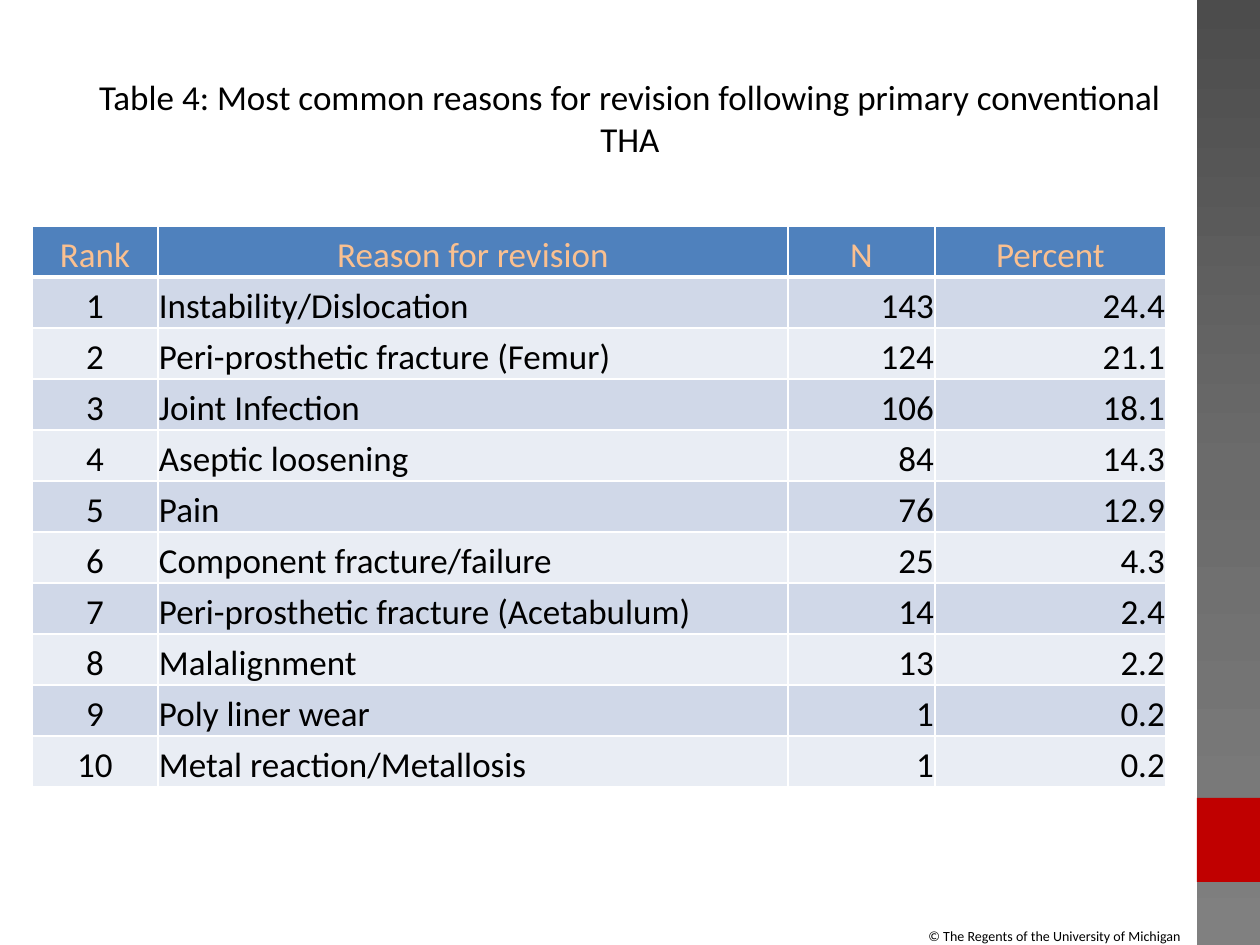
from copy import deepcopy

from lxml import etree
from pptx import Presentation
from pptx.dml.color import RGBColor
from pptx.enum.shapes import MSO_SHAPE
from pptx.enum.text import MSO_ANCHOR, PP_ALIGN
from pptx.oxml.ns import qn
from pptx.util import Pt

LEFT, CENTER, RIGHT = PP_ALIGN.LEFT, PP_ALIGN.CENTER, PP_ALIGN.RIGHT
TOP, MIDDLE, BOTTOM = MSO_ANCHOR.TOP, MSO_ANCHOR.MIDDLE, MSO_ANCHOR.BOTTOM
RECTANGLE = MSO_SHAPE.RECTANGLE
PX = 914400 // 126  # EMU per px

# Content
TITLE = "Table 4: Most common reasons for revision following primary conventional THA"
COPYRIGHT = "© The Regents of the University of Michigan"
HEADER = ("Rank", "Reason for revision", "N", "Percent")
REASONS = [
    ("Instability/Dislocation", "143", "24.4"),
    ("Peri-prosthetic fracture (Femur)", "124", "21.1"),
    ("Joint Infection", "106", "18.1"),
    ("Aseptic loosening", "84", "14.3"),
    ("Pain", "76", "12.9"),
    ("Component fracture/failure", "25", "4.3"),
    ("Peri-prosthetic fracture (Acetabulum)", "14", "2.4"),
    ("Malalignment", "13", "2.2"),
    ("Poly liner wear", "1", "0.2"),
    ("Metal reaction/Metallosis", "1", "0.2"),
]
ALIGNMENTS = (CENTER, LEFT, RIGHT, RIGHT)
COLUMN_WIDTHS = (126, 630, 147, 231)
ROW_HEIGHT = 51

COLORS = {
    "text": "000000", "header_text": "FAC090", "header": "4F81BD",
    "odd": "D0D8E8", "even": "E9EDF4", "border": "FFFFFF", "accent": "C00000",
    "bar_top": "4C4C4C", "bar_middle": "6B6B6B", "bar_bottom": "808080",
}


def rgb(name):
    return RGBColor.from_string(COLORS[name])


def px(*lengths):
    return [length * PX for length in lengths]


def write(frame, text, size=20, color="text", align=LEFT, anchor=TOP, wrap=True):
    frame.word_wrap = wrap
    frame.vertical_anchor = anchor
    paragraph = frame.paragraphs[0]
    paragraph.alignment = align
    run = paragraph.add_run()
    run.text = text
    run.font.name = "Calibri"
    run.font.size = Pt(size)
    run.font.bold = False
    run.font.color.rgb = rgb(color)


def add_bar(slide, *box):
    shape = slide.shapes.add_shape(RECTANGLE, *px(*box))
    shape.shadow.inherit = False
    shape.line.fill.background()
    return shape


def set_borders(cell, top, bottom):
    properties = cell._tc.get_or_add_tcPr()
    for side, width in (("L", 1), ("R", 1), ("T", top), ("B", bottom)):
        line = etree.SubElement(properties, qn(f"a:ln{side}"), w=str(Pt(width)))
        fill = etree.SubElement(line, qn("a:solidFill"))
        etree.SubElement(fill, qn("a:srgbClr"), val=COLORS["border"])


def add_side_bar(slide):
    bar = add_bar(slide, 1197, 0, 63, 945)
    bar.fill.gradient()
    bar.fill.gradient_angle = 270
    first = bar._element.spPr.find(".//" + qn("a:gs"))
    first.addnext(deepcopy(first))
    stops = zip(bar.fill.gradient_stops, ("bar_top", "bar_middle", "bar_bottom"), (0, 0.5, 1))
    for stop, color, position in stops:
        stop.color.rgb = rgb(color)
        stop.position = position

    accent = add_bar(slide, 1197, 798, 63, 84)
    accent.fill.solid()
    accent.fill.fore_color.rgb = rgb("accent")


def add_reason_table(slide):
    rows = [HEADER] + [(str(rank), *reason) for rank, reason in enumerate(REASONS, 1)]
    box = px(32, 226, sum(COLUMN_WIDTHS), ROW_HEIGHT * len(rows))
    table = slide.shapes.add_table(len(rows), len(HEADER), *box).table
    for column, width in zip(table.columns, COLUMN_WIDTHS):
        column.width = width * PX
    for r, values in enumerate(rows):
        table.rows[r].height = ROW_HEIGHT * PX
        is_header = r == 0
        fill = "header" if is_header else "odd" if r % 2 else "even"
        for c, value in enumerate(values):
            cell = table.cell(r, c)
            cell.margin_left = cell.margin_right = cell.margin_top = PX
            cell.margin_bottom = 0
            cell.vertical_anchor = BOTTOM
            set_borders(cell, top=3 if r == 1 else 1, bottom=3 if is_header else 1)
            cell.fill.solid()
            cell.fill.fore_color.rgb = rgb(fill)
            write(cell.text_frame, value, anchor=BOTTOM,
                  color="header_text" if is_header else "text",
                  align=CENTER if is_header else ALIGNMENTS[c])


def main():
    presentation = Presentation()
    presentation.slide_width, presentation.slide_height = px(1260, 945)
    slide = presentation.slides.add_slide(presentation.slide_layouts[6])

    add_side_bar(slide)

    # Copyright line and title
    footer = slide.shapes.add_textbox(*px(916, 921, 281, 30))
    write(footer.text_frame, COPYRIGHT, size=8, wrap=False)
    title = slide.shapes.add_textbox(*px(63, 38, 1134, 158))
    write(title.text_frame, TITLE, align=CENTER, anchor=MIDDLE)

    add_reason_table(slide)
    presentation.save("out.pptx")


if __name__ == "__main__":
    main()
